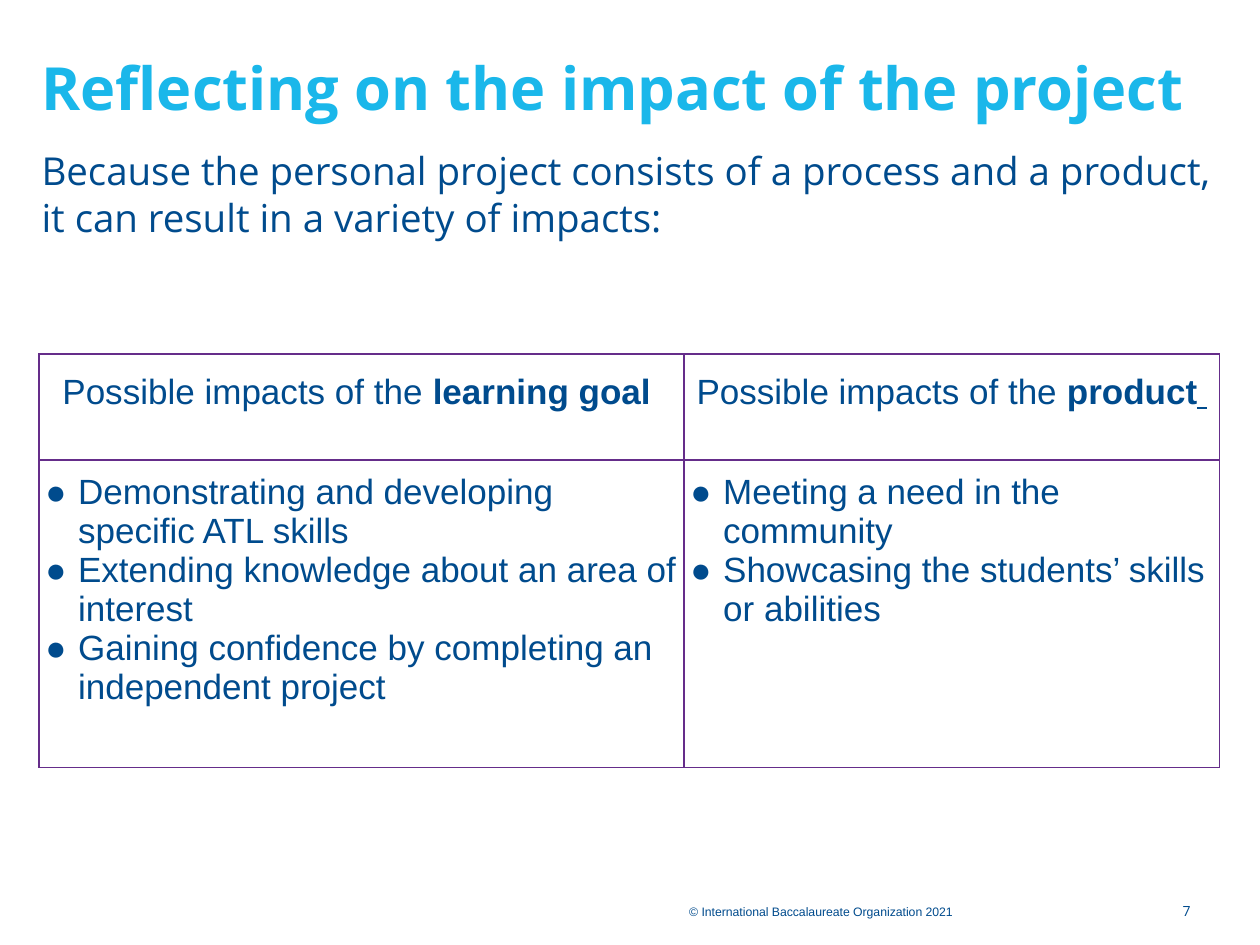
"""Build the slide on the impact of the personal project."""
from dataclasses import dataclass

from lxml import etree
from pptx import Presentation, util as u
from pptx.dml.color import RGBColor
from pptx.enum import text
from pptx.oxml import ns

COLORS = {"title": "1AB7EA", "body": "004B8D", "border": "652D8A"}
PLAIN, BOLD, UNDERLINED = {}, {"bold": True}, {"underline": True}


@dataclass
class TextBlock:
    words: str
    box: tuple[float, float, float, float]
    font: dict
    color: str = "body"
    anchor: text.MSO_ANCHOR = text.MSO_ANCHOR.TOP
    paragraph: dict | None = None


@dataclass
class Column:
    width: float
    heading: list[tuple[str, dict]]
    impacts: list[str]


TITLE = TextBlock(
    "Reflecting on the impact of the project", (0.33, 0.23, 9.12, 0.74),
    {"name": "Open Sans", "size": u.Pt(34), "bold": True}, "title", text.MSO_ANCHOR.BOTTOM,
    {"alignment": text.PP_ALIGN.LEFT, "line_spacing": 1.0})
BLOCKS = [
    TextBlock("© International Baccalaureate Organization 2021", (5.47, 7.13, 2.67, 0.13),
              {"name": "Arial", "size": u.Pt(7)}, paragraph={"line_spacing": 1.43}),
    TextBlock("Because the personal project consists of a process and a product, "
              "it can result in a variety of impacts:", (0.33, 1.17, 9.38, 1.07),
              {"name": "Open Sans", "size": u.Pt(22)}),
    TextBlock("7", (9.17, 7.13, 0.28, 0.16), {"name": "Open Sans", "size": u.Pt(8)},
              paragraph={"alignment": text.PP_ALIGN.RIGHT, "line_spacing": 1.25}),
]
COLUMNS = [
    Column(5.12, [("Possible impacts of the ", PLAIN), ("learning goal ", BOLD)],
           ["Demonstrating and developing specific ATL skills",
            "Extending knowledge about an area of interest",
            "Gaining confidence by completing an independent project"]),
    Column(4.25, [("Possible impacts of the ", PLAIN), ("product", BOLD), (" ", UNDERLINED)],
           ["Meeting a need in the community",
            "Showcasing the students’ skills or abilities"]),
]
ROW_HEIGHTS = [0.84, 2.44]
TABLE_FONT = {"name": "Arial", "size": u.Pt(20)}


def apply(target, values: dict) -> None:
    """Set each named attribute on the target."""
    for name, value in values.items():
        setattr(target, name, value)


def add_span(para, words: str, font: dict, color: str = "body") -> None:
    """Append a formatted run to a paragraph."""
    span = para.add_run()
    span.text = words
    apply(span.font, font)
    span.font.color.rgb = RGBColor.from_string(COLORS[color])


def fill_block(shape, block: TextBlock) -> None:
    """Place a text shape and write its block of text."""
    apply(shape, dict(zip(("left", "top", "width", "height"), map(u.Inches, block.box))))
    frame = shape.text_frame
    apply(frame, {"margin_left": 0, "margin_right": 0, "margin_top": 0, "margin_bottom": 0,
                  "word_wrap": True, "auto_size": text.MSO_AUTO_SIZE.NONE,
                  "vertical_anchor": block.anchor})
    para = frame.paragraphs[0]
    apply(para, block.paragraph or {})
    add_span(para, block.words, block.font, block.color)


def add_bullet(para) -> None:
    """Give a paragraph a hanging round bullet."""
    properties = para._p.get_or_add_pPr()
    indent = u.Inches(0.26)
    properties.set("marL", str(indent))
    properties.set("indent", str(-indent))
    color = etree.SubElement(properties, ns.qn("a:buClr"))
    etree.SubElement(color, ns.qn("a:srgbClr"), val=COLORS["body"])
    etree.SubElement(properties, ns.qn("a:buFont"), typeface="Arial")
    etree.SubElement(properties, ns.qn("a:buChar"), char="●")


def format_cell(cell) -> None:
    """Set the margins, borders and empty fill of a cell."""
    apply(cell, {"margin_left": u.Inches(0.05), "margin_right": u.Inches(0.05),
                 "margin_top": u.Inches(0.1), "margin_bottom": u.Inches(0.1)})
    properties = cell._tc.get_or_add_tcPr()
    for side in ("lnL", "lnR", "lnT", "lnB"):
        line = etree.SubElement(properties, ns.qn(f"a:{side}"), w=str(u.Pt(1)))
        fill = etree.SubElement(line, ns.qn("a:solidFill"))
        etree.SubElement(fill, ns.qn("a:srgbClr"), val=COLORS["border"])
    cell.fill.background()


def add_impact_table(page) -> None:
    """Draw the table with a heading and a bullet list per column."""
    width = sum(column.width for column in COLUMNS)
    lengths = map(u.Inches, (0.31, 2.81, width, sum(ROW_HEIGHTS)))
    table = page.shapes.add_table(len(ROW_HEIGHTS), len(COLUMNS), *lengths).table
    apply(table, {"first_row": False, "horz_banding": False})
    for row, height in zip(table.rows, ROW_HEIGHTS):
        row.height = u.Inches(height)
    for index, column in enumerate(COLUMNS):
        table.columns[index].width = u.Inches(column.width)
        heading, body = table.cell(0, index), table.cell(1, index)
        format_cell(heading)
        format_cell(body)
        para = heading.text_frame.paragraphs[0]
        apply(para, {"alignment": text.PP_ALIGN.CENTER, "line_spacing": 1.15})
        for words, style in column.heading:
            add_span(para, words, TABLE_FONT | style)
        frame = body.text_frame
        for position, impact in enumerate(column.impacts):
            para = frame.add_paragraph() if position else frame.paragraphs[0]
            add_bullet(para)
            add_span(para, impact, TABLE_FONT)


def main() -> None:
    """Create and save the deck."""
    deck = Presentation()
    apply(deck, {"slide_width": u.Inches(10), "slide_height": u.Inches(7.5)})
    page = deck.slides.add_slide(deck.slide_layouts[5])
    fill_block(page.shapes.title, TITLE)
    for block in BLOCKS:
        fill_block(page.shapes.add_textbox(*map(u.Inches, block.box)), block)
    add_impact_table(page)
    deck.save("out.pptx")


if __name__ == "__main__":
    main()
